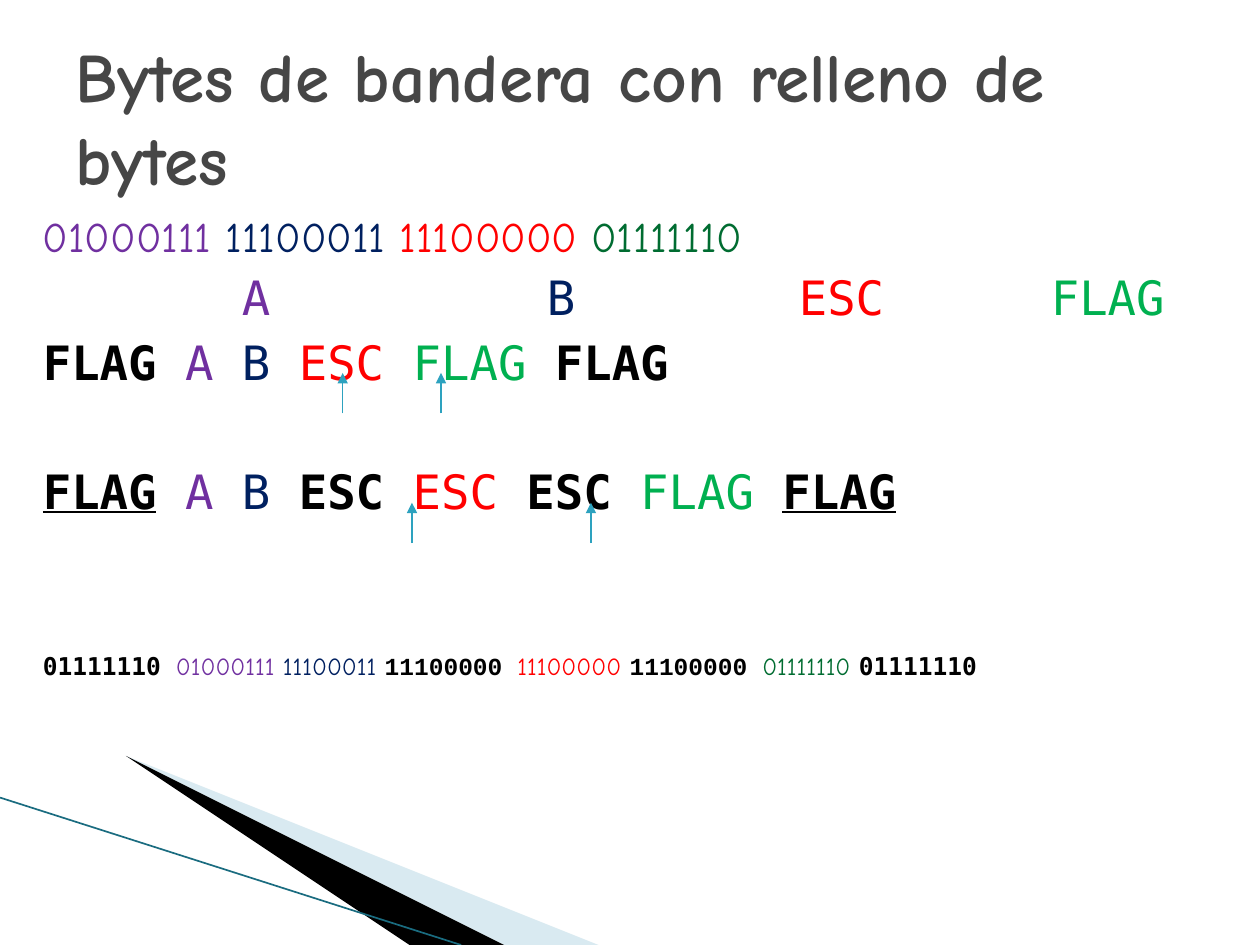
from lxml import etree
from pptx import Presentation
from pptx.dml.color import RGBColor
from pptx.enum.shapes import MSO_CONNECTOR
from pptx.enum.text import MSO_ANCHOR, MSO_AUTO_SIZE, PP_ALIGN
from pptx.oxml.ns import qn
from pptx.util import Inches, Pt

BLACK = RGBColor(0, 0, 0)
GRAY = RGBColor(0x46, 0x46, 0x46)
PURPLE = RGBColor(0x70, 0x30, 0xA0)
NAVY = RGBColor(0x00, 0x20, 0x60)
RED = RGBColor(0xFF, 0, 0)
GREEN = RGBColor(0x00, 0xB0, 0x50)
DARK_GREEN = RGBColor(0x00, 0x6C, 0x31)
PALE_BLUE = RGBColor(0xA0, 0xCB, 0xDC)
TEAL = RGBColor(0x1A, 0x6C, 0x80)
ARROW_BLUE = RGBColor(0x2D, 0xA2, 0xBF)

HAND, MONO, COURIER = "Comic Neue", "DejaVu Sans Mono", "Courier New"
TITLE = "Bytes de bandera con relleno de bytes"

# space before, size, [(text, colour, font, style)]
ROWS = [
    (0, 24, [("01000111 ", PURPLE, HAND, ""), ("11100011 ", NAVY, HAND, ""),
             ("11100000 ", RED, HAND, ""), ("01111110", DARK_GREEN, HAND, "")]),
    (4.5, 27, [("\tA", PURPLE, MONO, ""), ("\tB", NAVY, MONO, ""),
               ("\tESC", RED, MONO, ""), ("\tFLAG", GREEN, MONO, "")]),
    (4.5, 27, [("FLAG ", BLACK, MONO, "b"), ("A ", PURPLE, MONO, ""),
               ("B ", NAVY, MONO, ""), ("ESC ", RED, MONO, ""),
               ("FLAG ", GREEN, MONO, ""), ("FLAG", BLACK, MONO, "b")]),
    (41.5, 27, [("FLAG", BLACK, MONO, "bu"), (" ", BLACK, MONO, ""),
                ("A ", PURPLE, MONO, ""), ("B ", NAVY, MONO, ""),
                ("ESC ", BLACK, MONO, "b"), ("ESC ", RED, MONO, ""),
                ("ESC ", BLACK, MONO, "b"), ("FLAG ", GREEN, MONO, ""),
                ("FLAG", BLACK, MONO, "bu")]),
    (75.5, 14, [("01111110 ", BLACK, MONO, "b"), ("01000111 ", PURPLE, HAND, ""),
                ("11100011 ", NAVY, HAND, ""), ("11100000 ", BLACK, COURIER, "b"),
                ("11100000 ", RED, HAND, ""), ("11100000 ", BLACK, COURIER, "b"),
                ("01111110 ", DARK_GREEN, HAND, ""), ("01111110", BLACK, MONO, "b")]),
]
LABEL_ROW, LABEL_TABS = 1, (1.58, 4, 6, 8)
ARROW_TIPS = {2.96: (2.72, 3.5), 3.99: (3.27, 4.69)}
ARROW_LENGTH = 0.32
WEDGES = [
    (PALE_BLUE, 40, [(0.55, 6.5), (5.9, 7.5), (4.53, 7.5)]),
    (BLACK, 100, [(0.53, 6.49), (4.53, 7.5), (3.66, 7.5)]),
]
EDGE = (0, 6.33, 3.66, 7.5)


def add_wedge(shapes, color, opacity, corners):
    """Draw a filled polygon with the given opacity in percent."""
    builder = shapes.build_freeform(*corners[0], scale=Inches(1))
    builder.add_line_segments(corners[1:])
    wedge = builder.convert_to_shape()
    wedge.shadow.inherit = False
    wedge.fill.solid()
    wedge.fill.fore_color.rgb = color
    wedge.line.fill.background()
    if opacity < 100:
        fill_color = wedge._element.spPr.find(qn("a:solidFill"))[0]
        etree.SubElement(fill_color, qn("a:alpha"), val=str(opacity * 1000))


def add_line(shapes, ends, color, width, arrow=False):
    """Draw a straight line, with an arrowhead at its end if asked."""
    line = shapes.add_connector(MSO_CONNECTOR.STRAIGHT, *map(Inches, ends))
    line.line.color.rgb = color
    line.line.width = Pt(width)
    if arrow:
        etree.SubElement(line.line._get_or_add_ln(), qn("a:tailEnd"), type="triangle")
    etree.SubElement(line._element.spPr, qn("a:effectLst"))


def add_title(slide):
    """Place and format the title."""
    title = slide.shapes.title
    title.left, title.top, title.width, title.height = map(Inches, (0.5, 0.3, 9, 1.25))
    frame = title.text_frame
    frame.text = TITLE
    frame.word_wrap = True
    frame.auto_size = MSO_AUTO_SIZE.NONE
    frame.vertical_anchor = MSO_ANCHOR.MIDDLE
    frame.paragraphs[0].alignment = PP_ALIGN.LEFT
    font = frame.paragraphs[0].runs[0].font
    font.name, font.size, font.bold = HAND, Pt(39.6), True
    font.color.rgb = GRAY


def add_rows(shapes):
    """Write the byte sequences, one paragraph a row."""
    frame = shapes.add_textbox(*map(Inches, (0.12, 1.62, 9.76, 4.95))).text_frame
    frame.word_wrap = True
    frame.margin_left = Inches(0.22)
    for index, (space, size, pieces) in enumerate(ROWS):
        paragraph = frame.add_paragraph() if index else frame.paragraphs[0]
        paragraph.space_before = Pt(space)
        if index == LABEL_ROW:
            tabs = etree.SubElement(paragraph._p.get_or_add_pPr(), qn("a:tabLst"))
            for stop in LABEL_TABS:
                etree.SubElement(tabs, qn("a:tab"), pos=str(Inches(stop)), algn="l")
        for text, color, typeface, style in pieces:
            run = paragraph.add_run()
            run.text = text
            font = run.font
            font.name, font.size = typeface, Pt(size)
            font.bold, font.underline = "b" in style, "u" in style
            font.color.rgb = color


def main():
    """Build the byte-stuffing slide."""
    deck = Presentation()
    deck.slide_width, deck.slide_height = Inches(10), Inches(7.5)
    slide = deck.slides.add_slide(deck.slide_layouts[5])
    for wedge in WEDGES:
        add_wedge(slide.shapes, *wedge)
    add_line(slide.shapes, EDGE, TEAL, 0.95)
    add_rows(slide.shapes)
    add_title(slide)
    for tip, columns in ARROW_TIPS.items():
        for x in columns:
            add_line(slide.shapes, (x, tip + ARROW_LENGTH, x, tip), ARROW_BLUE, 0.75, True)
    deck.save("out.pptx")


if __name__ == "__main__":
    main()
